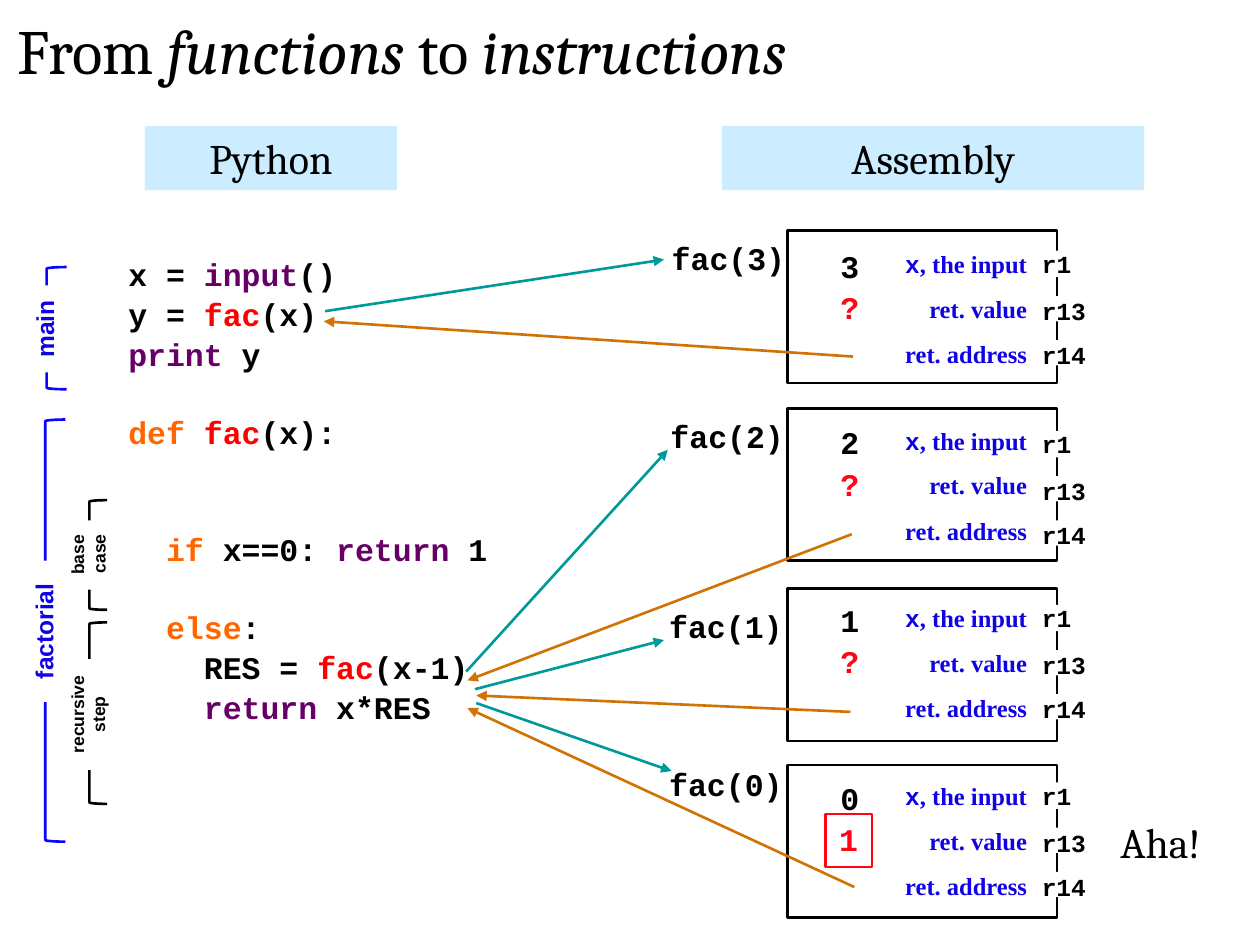
from typing import NamedTuple, Optional

from lxml.etree import SubElement
from pptx import Presentation
from pptx.dml.color import RGBColor
from pptx.enum.shapes import MSO_CONNECTOR, MSO_SHAPE
from pptx.enum.text import MSO_ANCHOR, MSO_AUTO_SIZE, PP_ALIGN
from pptx.oxml.ns import qn
from pptx.util import Inches, Pt

SLIDE_WIDTH, SLIDE_HEIGHT = Inches(10), Inches(7.5)
COLUMNS = 100
CELL = SLIDE_WIDTH / COLUMNS

BLACK, WHITE, SKY = "000000", "FFFFFF", "CCECFF"
BLUE, BRACKET_BLUE, RED = "0F02E4", "0B04FF", "FF0515"
CALL_TEAL, RETURN_BROWN = "009999", "D17204"
KEYWORD, BUILTIN, FUNCTION = "FF6600", "660066", "FF0000"
CODE_PITCH, CODE_SPACING, CODE_HEIGHT = 22, 0.6, 12.2


class Box(NamedTuple):
    left: float
    top: float
    width: float
    height: float


class Style(NamedTuple):
    font: str
    size: int
    color: str = BLACK
    bold: bool = True
    align: PP_ALIGN = PP_ALIGN.CENTER
    spacing: Optional[float] = None
    wrap: bool = True


class Run(NamedTuple):
    text: str
    color: Optional[str] = None
    font: Optional[str] = None
    italic: Optional[bool] = None


class Frame(NamedTuple):
    call: str
    value: str
    result: str
    top: float
    content_top: float
    register_top: float
    call_left: float
    call_top: float


class Register(NamedTuple):
    name: str
    drop: float
    width: float
    patch: Box


class CodeLine(NamedTuple):
    row: int
    indent: int
    runs: list[Run]


class Arrow(NamedTuple):
    color: str
    start: tuple[float, float]
    end: tuple[float, float]


class Bracket(NamedTuple):
    box: Box
    color: str


class Caption(NamedTuple):
    text: str
    box: Box
    size: int
    color: str
    wrap: bool = True


HEADING = Style("Cambria", 24, bold=False)
TITLE = Style("Cambria", 36, bold=False, align=PP_ALIGN.LEFT)
CALL = Style("Courier New", 18, align=PP_ALIGN.RIGHT, wrap=False)
VALUE = Style("Courier New", 18, wrap=False)
FIELD = Style("Times New Roman", 14, BLUE, align=PP_ALIGN.RIGHT)
REGISTER = Style("Courier New", 14, align=PP_ALIGN.LEFT)
CODE = Style("Courier New", 18, align=PP_ALIGN.LEFT, spacing=CODE_SPACING)

FRAMES = [
    Frame("fac(3)", "3", "?", 18.3, 19.3, 19.3, 52.3, 18.5),
    Frame("fac(2)", "2", "?", 32.4, 33.3, 33.6, 52.2, 32.6),
    Frame("fac(1)", "1", "?", 46.7, 47.4, 47.4, 52.1, 47.7),
    Frame("fac(0)", "0", "1", 60.7, 61.5, 61.5, 52.1, 60.2),
]
REGISTERS = [
    Register("r1", 0, 5.2, Box(81.9, 0.6, 5, 2.1)),
    Register("r13", 3.7, 7.6, Box(82.1, 0.5, 9.4, 2)),
    Register("r14", 7.2, 7, Box(82.1, 0.5, 8.7, 2)),
]
ARROWS = [
    Arrow(RETURN_BROWN, (67.7, 28.3), (25.7, 25.5)),
    Arrow(RETURN_BROWN, (67.6, 42.4), (37.1, 54)),
    Arrow(RETURN_BROWN, (67.5, 56.5), (37.8, 55.2)),
    Arrow(RETURN_BROWN, (67.8, 70.4), (37.1, 56.2)),
    Arrow(CALL_TEAL, (25.8, 24.7), (52.7, 20.6)),
    Arrow(CALL_TEAL, (37, 53.3), (53, 35.7)),
    Arrow(CALL_TEAL, (37.7, 54.7), (52.7, 50.8)),
    Arrow(CALL_TEAL, (37.8, 55.8), (53.3, 61.2)),
]
CODE_LINES = [
    CodeLine(1, 0, [Run("x = "), Run("input", BUILTIN), Run("()")]),
    CodeLine(2, 0, [Run("y = "), Run("fac", FUNCTION), Run("(x)")]),
    CodeLine(3, 0, [Run("print ", BUILTIN), Run("y")]),
    CodeLine(5, 0, [Run("def ", KEYWORD), Run("fac", FUNCTION), Run("(x):")]),
    CodeLine(8, 1, [Run("if ", KEYWORD), Run("x==0: "), Run("return ", BUILTIN), Run("1")]),
    CodeLine(10, 1, [Run("else", KEYWORD), Run(":")]),
    CodeLine(11, 2, [Run("RES = "), Run("fac", FUNCTION), Run("(x-1)")]),
    CodeLine(12, 2, [Run("return ", BUILTIN), Run("x*RES")]),
]
SECTIONS = [
    Bracket(Box(3.7, 21.2, 1.6, 9.7), BRACKET_BLUE),
    Bracket(Box(3.6, 33.3, 1.6, 33.5), BRACKET_BLUE),
    Bracket(Box(7.1, 49.4, 1.4, 14.4), BLACK),
    Caption("factorial", Box(-2.1, 48.4, 11.2, 3.4), 14, BLUE),
    Caption("recursive step", Box(2.6, 54.5, 8.8, 4.4), 10, BLACK),
    Caption("main", Box(0.1, 24.4, 6.9, 3.4), 14, BLUE),
    Caption("case", Box(5.3, 42.6, 5.1, 2.7), 10, BLACK, wrap=False),
    Bracket(Box(7.1, 39.7, 1.4, 8.7), BLACK),
    Caption("base", Box(3.4, 42.7, 5.5, 2.7), 10, BLACK),
]


def cells(*lengths: float) -> list[int]:
    return [round(length * CELL) for length in lengths]


def rgb(color: str) -> RGBColor:
    return RGBColor.from_string(color)


def draw_shape(shapes, kind, box: Box, fill=None, line=None):
    shape = shapes.add_shape(kind, *cells(*box))
    shape.shadow.inherit = False
    if fill:
        shape.fill.solid()
        shape.fill.fore_color.rgb = rgb(fill)
    else:
        shape.fill.background()
    if line:
        shape.line.color.rgb = rgb(line)
        shape.line.width = Pt(1.5)
    else:
        shape.line.fill.background()
    return shape


def write_paragraph(paragraph, runs: list[Run], style: Style) -> None:
    paragraph.alignment = style.align
    paragraph.line_spacing = style.spacing
    font = paragraph.font
    font.name, font.size, font.bold = style.font, Pt(style.size), style.bold
    font.color.rgb = rgb(style.color)
    for part in runs:
        run = paragraph.add_run()
        run.text = part.text
        run.font.italic = part.italic
        if part.font:
            run.font.name = part.font
        if part.color:
            run.font.color.rgb = rgb(part.color)


def prepare_frame(holder, style: Style):
    frame = holder.text_frame
    frame.word_wrap = style.wrap
    frame.auto_size = MSO_AUTO_SIZE.SHAPE_TO_FIT_TEXT
    frame.vertical_anchor = MSO_ANCHOR.TOP
    return frame


def draw_text(shapes, box: Box, runs: list[Run], style: Style, fill=None, line=None):
    if fill or line:
        holder = draw_shape(shapes, MSO_SHAPE.RECTANGLE, box, fill, line)
    else:
        holder = shapes.add_textbox(*cells(*box))
    write_paragraph(prepare_frame(holder, style).paragraphs[0], runs, style)
    return holder


def draw_frame(shapes, frame: Frame) -> None:
    top = frame.content_top
    returned = frame.result != "?"
    draw_text(shapes, Box(frame.call_left, frame.call_top, 11, 4), [Run(frame.call)], CALL)
    draw_text(shapes, Box(67.5, top, 15, 3.3), [Run("x", font="Courier New"), Run(", the input")], FIELD)
    for name, drop in (("ret. value", 3.8), ("ret. address", 7.4)):
        draw_text(shapes, Box(66.3, top + drop, 16.2, 3.1), [Run(name)], FIELD._replace(spacing=0.9))
    draw_text(shapes, Box(65.7, top - 0.2, 3.5, 4), [Run(frame.value)], VALUE)
    result_box = Box(65.5, top + 3.1, 3.7, 4.2) if returned else Box(65.7, top + 3.1, 3.5, 4)
    draw_text(shapes, result_box, [Run(frame.result)], VALUE._replace(color=RED), line=RED if returned else None)


def draw_register(shapes, register: Register, first_top: float) -> None:
    members = shapes.add_group_shape().shapes
    top = first_top + register.drop
    patch = register.patch._replace(top=top + register.patch.top)
    draw_shape(members, MSO_SHAPE.ROUNDED_RECTANGLE, patch, WHITE)
    draw_text(members, Box(81.7, top, register.width, 3.4), [Run(register.name)], REGISTER)


def draw_arrow(shapes, arrow: Arrow) -> None:
    connector = shapes.add_connector(MSO_CONNECTOR.STRAIGHT, *cells(*arrow.start, *arrow.end))
    connector.line.color.rgb = rgb(arrow.color)
    connector.line.width = Pt(1.5)
    SubElement(connector.line._get_or_add_ln(), qn("a:tailEnd"), type="triangle")
    SubElement(connector._element.spPr, qn("a:effectLst"))


def draw_code(shapes) -> None:
    text = prepare_frame(shapes.add_textbox(*cells(9.2, 20.8, 32.6, 39.7)), CODE)
    previous_row = 0
    for line in CODE_LINES:
        paragraph = text.add_paragraph() if previous_row else text.paragraphs[0]
        write_paragraph(paragraph, line.runs, CODE)
        if previous_row:
            paragraph.space_before = Pt((line.row - previous_row) * CODE_PITCH - CODE_HEIGHT)
        paragraph._p.get_or_add_pPr().set("marL", str(cells(3 * line.indent)[0]))
        previous_row = line.row


def draw_section(shapes, part) -> None:
    if isinstance(part, Bracket):
        draw_shape(shapes, MSO_SHAPE.LEFT_BRACKET, part.box, line=part.color)
    else:
        style = Style("Arial", part.size, part.color, wrap=part.wrap)
        draw_text(shapes, part.box, [Run(part.text)], style, fill=WHITE).rotation = 270


def main() -> None:
    deck = Presentation()
    deck.slide_width, deck.slide_height = SLIDE_WIDTH, SLIDE_HEIGHT
    slide = deck.slides.add_slide(deck.slide_layouts[5])
    shapes = slide.shapes

    title = shapes.title
    title.left, title.top, title.width, title.height = cells(0.4, 0.4, 90, 7.1)
    words = [Run("From "), Run("functions", italic=True), Run(" to "), Run("instructions", italic=True)]
    write_paragraph(prepare_frame(title, TITLE).paragraphs[0], words, TITLE)

    for frame in FRAMES:
        draw_shape(shapes, MSO_SHAPE.RECTANGLE, Box(62.5, frame.top, 21.4, 12.1), line=BLACK)
    for frame in FRAMES:
        draw_frame(shapes, frame)
    for arrow in ARROWS:
        draw_arrow(shapes, arrow)
    draw_code(shapes)
    for part in SECTIONS:
        draw_section(shapes, part)
    for frame in FRAMES:
        for register in REGISTERS:
            draw_register(shapes, register, frame.register_top)

    draw_text(shapes, Box(87.5, 64.3, 9.2, 5), [Run("Aha!")], HEADING)
    for heading, left, width in (("Assembly", 57.3, 33.5), ("Python", 11.5, 20)):
        draw_text(shapes, Box(left, 10, width, 5.1), [Run(heading)], HEADING, fill=SKY)
    deck.save("out.pptx")


if __name__ == "__main__":
    main()
